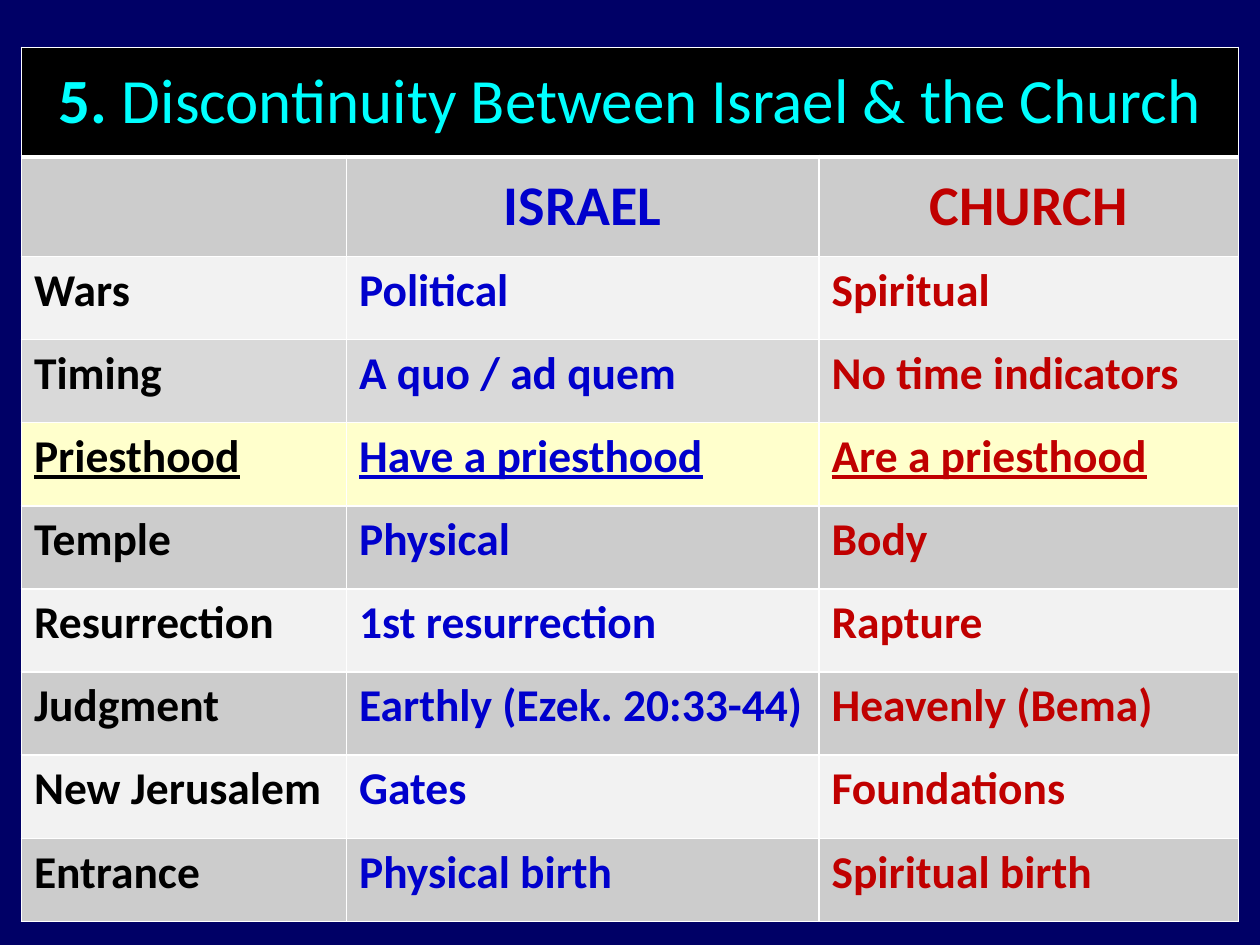
from dataclasses import dataclass

import pptx
import pptx.util
import pptx.dml.color
import pptx.enum.text
import pptx.oxml
import pptx.oxml.ns
from lxml import etree

Pt = pptx.util.Pt
Inches = pptx.util.Inches
RGB = pptx.dml.color.RGBColor.from_string
Align = pptx.enum.text.PP_ALIGN
Anchor = pptx.enum.text.MSO_ANCHOR
qn = pptx.oxml.ns.qn


@dataclass(frozen=True)
class Theme:
    font: str = "Calibri"
    background: str = "000066"
    border: str = "FFFFFF"
    banner: str = "000000"
    title: str = "00FFFF"
    topic: str = "000000"
    israel: str = "0000CC"
    church: str = "C00000"
    dark_band: str = "CCCCCC"
    mid_band: str = "D9D9D9"
    light_band: str = "F2F2F2"
    highlight: str = "FFFFCC"
    title_size: int = 36
    heading_size: int = 32
    body_size: int = 26
    thin: int = 1
    thick: int = 3


class SlideBuilder:
    def __init__(self, deck, theme):
        self.theme = theme
        self.width, self.height = deck.slide_width, deck.slide_height
        self.slide = deck.slides.add_slide(deck.slide_layouts[6])
        fill = self.slide.background.fill
        fill.solid()
        fill.fore_color.rgb = RGB(theme.background)

    def grid(self, left, top, columns, rows):
        """Add a table; every length is a share of the slide's size."""
        frame = self.slide.shapes.add_table(
            len(rows), len(columns),
            round(left * self.width), round(top * self.height),
            round(sum(columns) * self.width), round(sum(rows) * self.height))
        table = frame.table
        table.first_row = table.horz_banding = False
        for column, share in zip(table.columns, columns):
            column.width = round(share * self.width)
        for row, share in zip(table.rows, rows):
            row.height = round(share * self.height)
        return table

    def paint(self, cell, color, **border_widths):
        """Draw the four borders, then the fill."""
        properties = cell._tc.get_or_add_tcPr()
        for side in "LRTB":
            width = border_widths.get(side, self.theme.thin)
            line = etree.SubElement(properties, qn(f"a:ln{side}"), w=str(Pt(width)))
            solid = etree.SubElement(line, qn("a:solidFill"))
            etree.SubElement(solid, qn("a:srgbClr"), val=self.theme.border)
        cell.fill.solid()
        cell.fill.fore_color.rgb = RGB(color)

    def add_runs(self, cell, runs, size, color, underline=False):
        """Fill a cell's paragraph with (text, bold) runs."""
        paragraph = cell.text_frame.paragraphs[0]
        for text, bold in runs:
            run = paragraph.add_run()
            run.text = text
            style = {"name": self.theme.font, "size": Pt(size),
                     "bold": bold, "underline": underline}
            for attribute, value in style.items():
                setattr(run.font, attribute, value)
            run.font.color.rgb = RGB(color)
        return paragraph

    def heading(self, cell, runs, size, color):
        cell.vertical_anchor = Anchor.MIDDLE
        paragraph = self.add_runs(cell, runs, size, color)
        paragraph.alignment = Align.CENTER
        # Space before as a share of the line: 20 %
        before = etree.SubElement(paragraph._p.get_or_add_pPr(), qn("a:spcBef"))
        etree.SubElement(before, qn("a:spcPct"), val="20000")

    def entry(self, cell, text, color, underline):
        paragraph = self.add_runs(cell, [(text, True)], self.theme.body_size,
                                  color, underline)
        paragraph.space_before = paragraph.space_after = Pt(6)


def main():
    theme = Theme()
    deck = pptx.Presentation()
    deck.slide_width, deck.slide_height = Inches(10), Inches(7.5)
    builder = SlideBuilder(deck, theme)

    contrasts = [
        ("Wars", "Political", "Spiritual", theme.light_band),
        ("Timing", "A quo / ad quem", "No time indicators", theme.mid_band),
        ("Priesthood", "Have a priesthood", "Are a priesthood", theme.highlight),
        ("Temple", "Physical", "Body", theme.dark_band),
        ("Resurrection", "1st resurrection", "Rapture", theme.light_band),
        ("Judgment", "Earthly (Ezek. 20:33-44)", "Heavenly (Bema)", theme.dark_band),
        ("New Jerusalem", "Gates", "Foundations", theme.light_band),
        ("Entrance", "Physical birth", "Spiritual birth", theme.dark_band),
    ]
    # Row heights: inches out of the slide's 7.5
    row_heights = [0.87, 0.79] + [0.66] * len(contrasts)
    table = builder.grid(
        left=0.017, top=0.05, columns=[0.258, 0.375, 0.333],
        rows=[height / 7.5 for height in row_heights])

    # Banner and column headings, divided by a thick line
    for column in range(3):
        builder.paint(table.cell(0, column), theme.banner, B=theme.thick)
        builder.paint(table.cell(1, column), theme.dark_band, T=theme.thick)
    banner = table.cell(0, 0)
    banner.merge(table.cell(0, 2))
    builder.heading(
        banner,
        [("5. ", True), ("Discontinuity Between Israel & the Church", False)],
        theme.title_size, theme.title)
    headings = [("ISRAEL", theme.israel), ("CHURCH", theme.church)]
    for column, (name, color) in enumerate(headings, start=1):
        builder.heading(table.cell(1, column), [(name, True)],
                        theme.heading_size, color)

    # Contrasts, with the current topic underlined
    column_colors = [theme.topic, theme.israel, theme.church]
    for row, (*entries, band) in enumerate(contrasts, start=2):
        for column, (text, color) in enumerate(zip(entries, column_colors)):
            cell = table.cell(row, column)
            builder.paint(cell, band)
            builder.entry(cell, text, color, underline=band == theme.highlight)

    deck.save("out.pptx")


if __name__ == "__main__":
    main()
